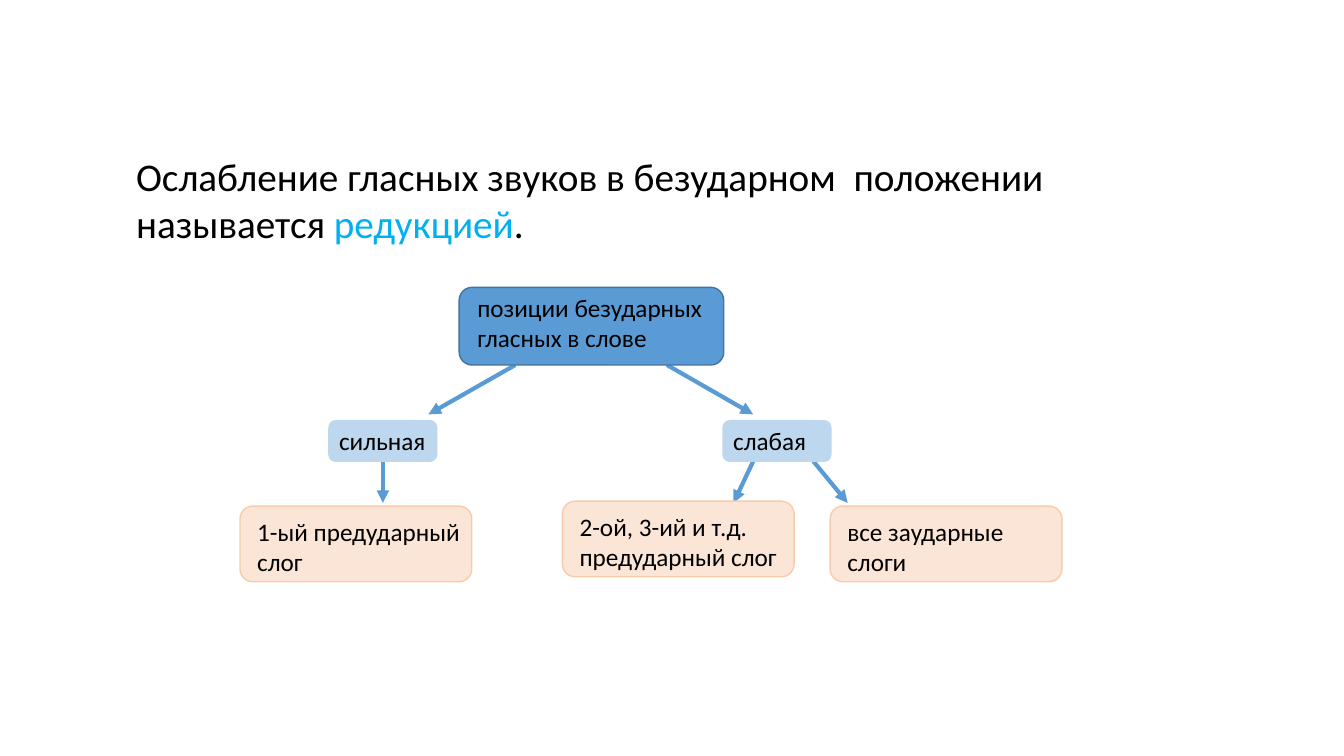
"""Builds a slide on vowel reduction: a definition above a tree of unstressed positions."""
from lxml import etree
from pptx import Presentation
from pptx.dml.color import RGBColor
from pptx.enum.shapes import MSO_CONNECTOR, MSO_SHAPE
from pptx.enum.text import MSO_ANCHOR, MSO_AUTO_SIZE, PP_ALIGN
from pptx.oxml.ns import qn
from pptx.util import Pt

ROUNDED, STRAIGHT = MSO_SHAPE.ROUNDED_RECTANGLE, MSO_CONNECTOR.STRAIGHT
TOP, LEFT, FIXED = MSO_ANCHOR.TOP, PP_ALIGN.LEFT, MSO_AUTO_SIZE.NONE

DEFINITION = [
    ("Ослабление гласных звуков в безударном  положении называется ", "000000"),
    ("редукцией", "00B0F0"),
    (".", "000000"),
]
DEFINITION_BOX = (90, 105, 706.5, 108.5)

LEVELS = {
    "root": dict(size=(189, 55.5), fill="5B9BD5", line="43739E", inset=(10.3, 1)),
    "position": dict(size=(77, 29), fill="BDD7EE", line="BDD7EE", inset=(5.8, 2.2)),
    "syllable": dict(size=(165.5, 54), fill="FBE5D6", line="F8CBAD", inset=(9.6, 4.6)),
}
NODES = [
    ("root", "позиции безударных гласных в слове", 328, 205.25),
    ("position", "сильная", 235, 300.5),
    ("position", "слабая", 516.5, 300.5),
    ("syllable", "1-ый предударный слог", 171.5, 361.5),
    ("syllable", "2-ой, 3-ий и т.д. предударный слог", 401.75, 358),
    ("syllable", "все заударные слоги", 593, 361.5),
]
ARROW_COLOR = "5B9BD5"
ARROW_ROWS = [
    (260.75, 296, [(368, 306), (476.5, 538)]),
    (329.5, 359.25, [(273.5, 273.5), (538, 524), (581, 605.5)]),
]


def color(value):
    return RGBColor.from_string(value)


def write(shape, runs, size=18, inset=(7.2, 3.6)):
    frame = shape.text_frame
    frame.word_wrap, frame.auto_size, frame.vertical_anchor = True, FIXED, TOP
    frame.margin_left, frame.margin_top = Pt(inset[0]), Pt(inset[1])
    frame.margin_right = frame.margin_bottom = 0
    paragraph = frame.paragraphs[0]
    paragraph.alignment = LEFT
    for words, shade in runs:
        run = paragraph.add_run()
        run.text = words
        run.font.name, run.font.size = "Calibri", Pt(size)
        run.font.color.rgb = color(shade)


def add_arrow(slide, start_x, start_y, end_x, end_y):
    arrow = slide.shapes.add_connector(
        STRAIGHT, Pt(start_x), Pt(start_y), Pt(end_x), Pt(end_y))
    arrow.line.color.rgb, arrow.line.width = color(ARROW_COLOR), Pt(3)
    etree.SubElement(arrow.line._get_or_add_ln(), qn("a:tailEnd"), type="triangle")
    etree.SubElement(arrow._element.spPr, qn("a:effectLst"))


def add_node(slide, level, words, left, top):
    style = LEVELS[level]
    width, height = style["size"]
    node = slide.shapes.add_shape(ROUNDED, Pt(left), Pt(top), Pt(width), Pt(height))
    node.shadow.inherit = False
    node.fill.solid()
    node.fill.fore_color.rgb = color(style["fill"])
    node.line.color.rgb, node.line.width = color(style["line"]), Pt(1)
    write(node, [(words, "000000")], inset=style["inset"])


def main():
    deck = Presentation()
    deck.slide_width, deck.slide_height = Pt(960), Pt(540)
    slide = deck.slides.add_slide(deck.slide_layouts[5])

    definition = slide.shapes.title
    definition.left, definition.top, definition.width, definition.height = map(
        Pt, DEFINITION_BOX)
    write(definition, DEFINITION, size=28)

    for start_y, end_y, spans in ARROW_ROWS:
        for start_x, end_x in spans:
            add_arrow(slide, start_x, start_y, end_x, end_y)
    for node in NODES:
        add_node(slide, *node)

    deck.save("out.pptx")


if __name__ == "__main__":
    main()
